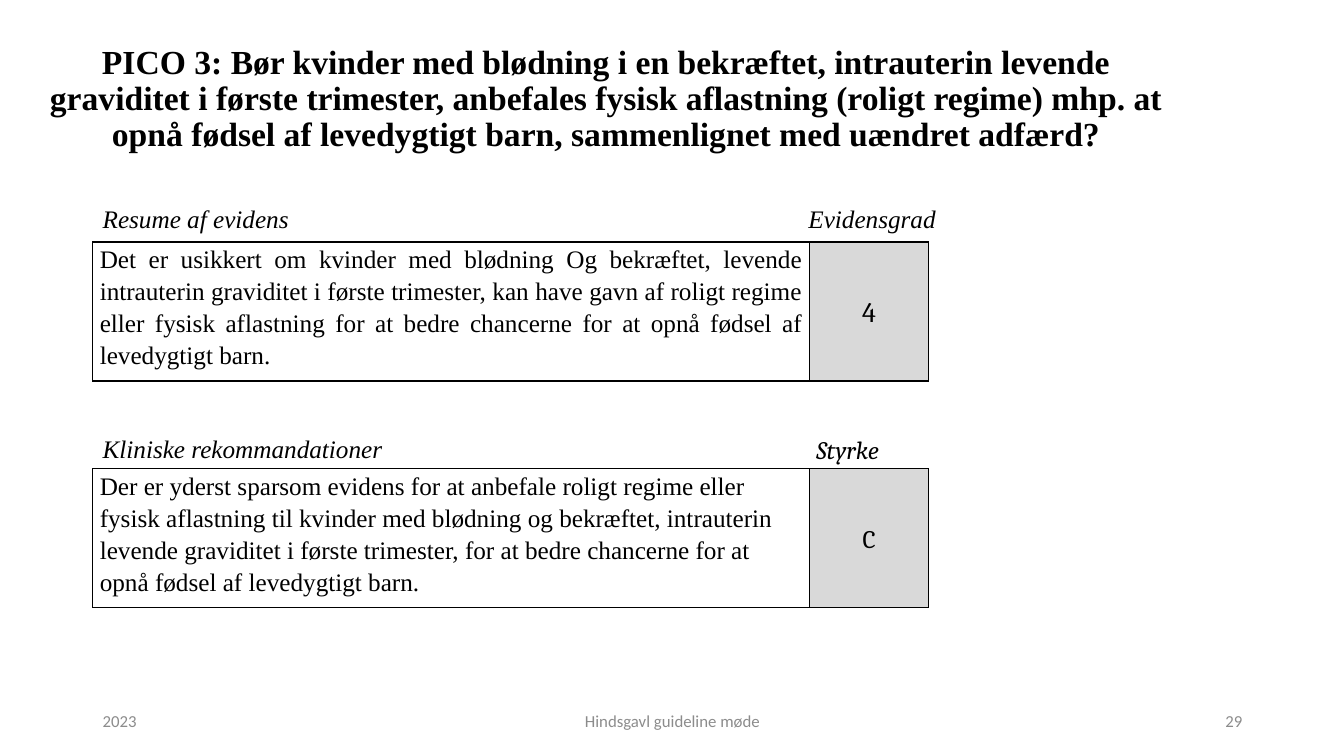
from lxml.etree import SubElement
from pptx import Presentation
from pptx.dml.color import RGBColor
from pptx.enum.text import MSO_ANCHOR, PP_ALIGN
from pptx.oxml.ns import qn
from pptx.util import Inches, Pt

SERIF = "Times New Roman"
BLACK = "000000"
GREY = "8C8C8C"
LEFT = 0.92
COLUMN_WIDTHS = (7.11, 1.18)


def color(hex_value):
    return RGBColor.from_string(hex_value)


def write(paragraph, text, size=18, font=SERIF, hex_value=BLACK, bold=False,
          italic=False, align=PP_ALIGN.LEFT, spacing=1.0):
    paragraph.alignment = align
    paragraph.line_spacing = spacing
    run = paragraph.add_run()
    run.text = text
    run.font.size = Pt(size)
    run.font.name = font
    run.font.bold = bold
    run.font.italic = italic
    run.font.color.rgb = color(hex_value)


def add_title(slide, text):
    title = slide.shapes.title
    title.left, title.top = Inches(0.26), Inches(0.45)
    title.width, title.height = Inches(11.5), Inches(1.45)
    frame = title.text_frame
    frame.word_wrap = True
    frame.vertical_anchor = MSO_ANCHOR.TOP
    frame.margin_top = 0
    write(frame.paragraphs[0], text, size=24, bold=True,
          align=PP_ALIGN.CENTER, spacing=0.9)


def add_text(slide, text, left, top, width, anchor=MSO_ANCHOR.TOP,
             tab_stop=None, **style):
    box = slide.shapes.add_textbox(
        Inches(left), Inches(top), Inches(width), Inches(0.4))
    frame = box.text_frame
    frame.word_wrap = True
    frame.vertical_anchor = anchor
    paragraph = frame.paragraphs[0]
    if tab_stop:
        tabs = SubElement(paragraph._p.get_or_add_pPr(), qn("a:tabLst"))
        SubElement(tabs, qn("a:tab"), pos=str(Inches(tab_stop)), algn="l")
    write(paragraph, text, **style)


def add_borders(cell):
    properties = cell._tc.get_or_add_tcPr()
    for index, side in enumerate(("lnL", "lnR", "lnT", "lnB")):
        line = properties.makeelement(qn(f"a:{side}"), {"w": str(Pt(1))})
        fill = SubElement(line, qn("a:solidFill"))
        SubElement(fill, qn("a:srgbClr"), val=BLACK)
        properties.insert(index, line)


def add_graded_table(slide, top, height, statement, grade, align, grade_size):
    table = slide.shapes.add_table(
        1, 2, Inches(LEFT), Inches(top),
        Inches(sum(COLUMN_WIDTHS)), Inches(height)).table
    table.first_row = False
    table.horz_banding = False
    for column, width in zip(table.columns, COLUMN_WIDTHS):
        column.width = Inches(width)
    statement_cell, grade_cell = table.rows[0].cells
    for cell, fill in ((statement_cell, "FFFFFF"), (grade_cell, "D9D9D9")):
        cell.margin_left = cell.margin_right = Inches(0.07)
        cell.margin_top = cell.margin_bottom = 0
        cell.fill.solid()
        cell.fill.fore_color.rgb = color(fill)
        add_borders(cell)
    grade_cell.vertical_anchor = MSO_ANCHOR.MIDDLE
    write(statement_cell.text_frame.paragraphs[0], statement,
          align=align, spacing=1.15)
    write(grade_cell.text_frame.paragraphs[0], grade, size=grade_size,
          font="Cambria", align=PP_ALIGN.CENTER, spacing=1.15)


def add_footer(slide):
    for text, left, width, align in (
            ("2023", LEFT, 3, PP_ALIGN.LEFT),
            ("Hindsgavl guideline møde", 4.42, 4.5, PP_ALIGN.CENTER),
            ("29", 9.42, 3, PP_ALIGN.RIGHT)):
        add_text(slide, text, left, 6.95, width, anchor=MSO_ANCHOR.MIDDLE,
                 size=12, font="Calibri", hex_value=GREY, align=align)


def main():
    presentation = Presentation()
    presentation.slide_width = Inches(13.33)
    presentation.slide_height = Inches(7.5)
    slide = presentation.slides.add_slide(presentation.slide_layouts[5])

    add_title(slide, "PICO 3: Bør kvinder med blødning i en bekræftet, "
              "intrauterin levende graviditet i første trimester, anbefales "
              "fysisk aflastning (roligt regime) mhp. at opnå fødsel af "
              "levedygtigt barn, sammenlignet med uændret adfærd?")

    add_text(slide, "Resume af evidens\tEvidensgrad", LEFT, 2, 11.5,
             tab_stop=7, italic=True, spacing=0.9)
    add_graded_table(
        slide, 2.4, 1.27,
        "Det er usikkert om kvinder med blødning Og bekræftet, levende "
        "intrauterin graviditet i første trimester, kan have gavn af roligt "
        "regime eller fysisk aflastning for at bedre chancerne for at opnå "
        "fødsel af levedygtigt barn.",
        "4", PP_ALIGN.JUSTIFY, 20)

    add_text(slide, "Kliniske rekommandationer", LEFT, 4.25, 6.66, italic=True)
    add_text(slide, "Styrke", 8, 4.26, 2.3, font="Cambria", italic=True)
    add_graded_table(
        slide, 4.65, 1.35,
        "Der er yderst sparsom evidens for at anbefale roligt regime eller "
        "fysisk aflastning til kvinder med blødning og bekræftet, intrauterin "
        "levende graviditet i første trimester, for at bedre chancerne for at "
        "opnå fødsel af levedygtigt barn.",
        "C", PP_ALIGN.LEFT, 18)

    add_footer(slide)
    presentation.save("out.pptx")


if __name__ == "__main__":
    main()
